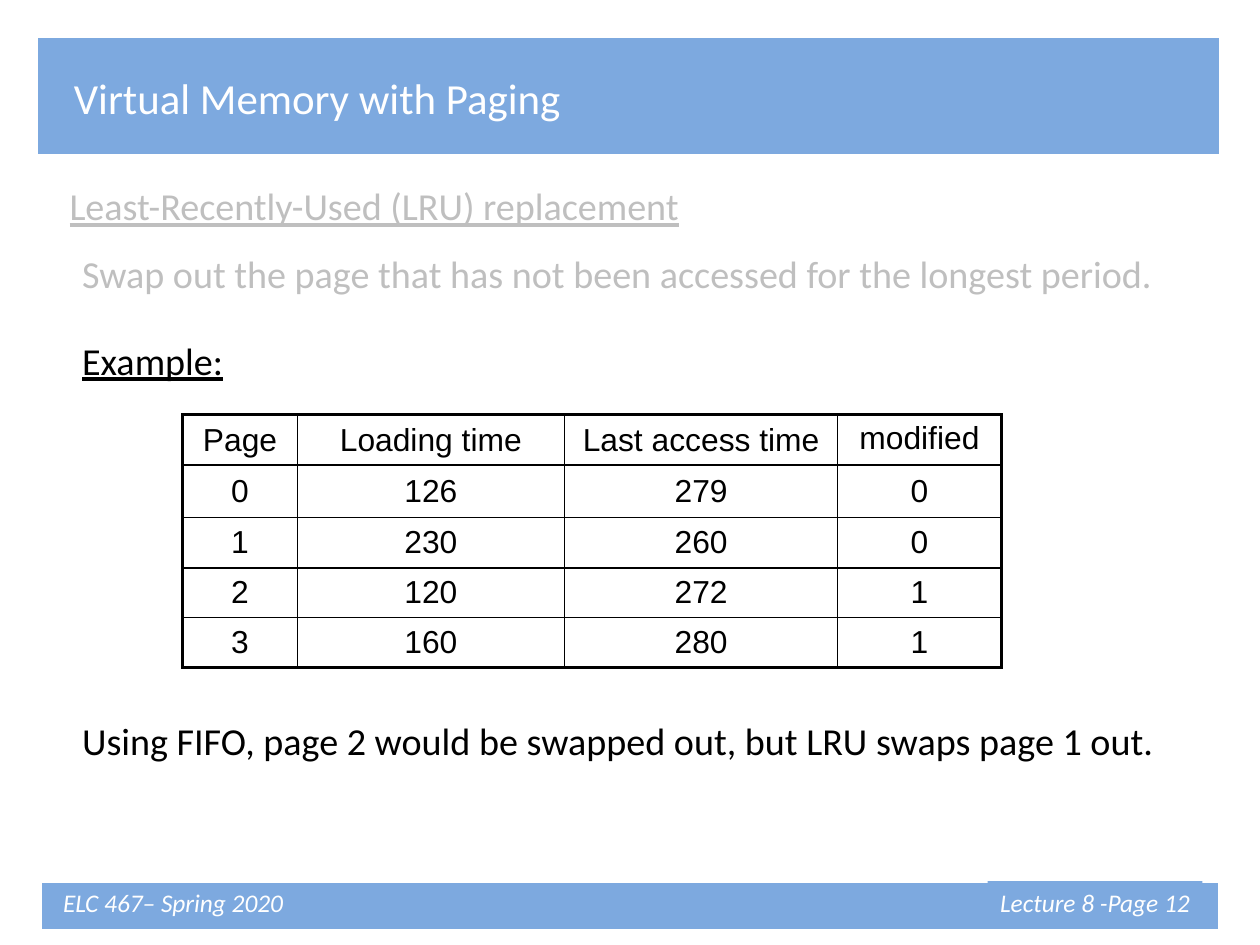
from dataclasses import dataclass

from lxml.etree import SubElement
from pptx import Presentation
from pptx.dml.color import RGBColor as RGB
from pptx.enum.shapes import MSO_SHAPE as SHAPE
from pptx.enum.text import MSO_ANCHOR as ANCHOR, MSO_AUTO_SIZE as AUTO, PP_ALIGN as ALIGN
from pptx.oxml.ns import qn
from pptx.slide import Slide
from pptx.util import Inches, Pt

COLORS = {"blue": "7DA9DF", "white": "FFFFFF", "gray": "BFBFBF", "black": "000000"}
THIN, THICK = 1, 2.25
CM_PER_INCH = 2.54
SLIDE_WIDTH, SLIDE_HEIGHT = 28 / CM_PER_INCH, 21 / CM_PER_INCH


@dataclass
class Bar:
    left: float
    top: float
    width: float
    height: float


@dataclass
class Label:
    text: str
    left: float
    top: float
    width: float
    height: float
    color: str
    size: float = 24
    align: ALIGN = ALIGN.CENTER
    wrap: bool = False
    underline: bool = False
    italic: bool = False
    fill: str = ""
    inset: bool = True


TITLE_BAR = Bar(0.32, 0.32, 10.36, 1.04)
FOOTER_BAR = Bar(0.35, 7.71, 10.32, 0.43)

LABELS = [
    Label("Virtual Memory with Paging", 0.49, 0.58, 4.57, 0.56, "white", size=27),
    Label("Lecture 8 -Page 12", 8.64, 7.71, 1.88, 0.37, "white", size=16,
          italic=True, fill="blue"),
    Label("ELC 467– Spring 2020", 0.54, 7.76, 1.95, 0.27, "white", size=16,
          italic=True, fill="blue", inset=False),
    Label("Least-Recently-Used (LRU) replacement", 0.47, 1.55, 5.61, 0.5, "gray",
          underline=True),
    Label("Swap out the page that has not been accessed for the longest period.",
          0.62, 2.14, 9.58, 0.5, "gray", align=ALIGN.JUSTIFY, wrap=True),
    Label("Example:", 0.62, 2.9, 1.83, 0.5, "black", align=ALIGN.LEFT, wrap=True,
          underline=True),
    Label("Using FIFO, page 2 would be swapped out, but LRU swaps page 1 out.",
          0.62, 6.23, 9.7, 0.5, "black", align=ALIGN.JUSTIFY, wrap=True),
]

PAGES = [
    ["Page", "Loading time", "Last access time", "modified"],
    ["0", "126", "279", "0"],
    ["1", "230", "260", "0"],
    ["2", "120", "272", "1"],
    ["3", "160", "280", "1"],
]
COL_WIDTHS = [1, 2.34, 2.39, 1.43]
ROW_HEIGHTS = [0.44, 0.46, 0.44, 0.43, 0.43]


def rgb(name: str) -> RGB:
    return RGB.from_string(COLORS[name])


def add_bar(s: Slide, bar: Bar) -> None:
    sp = s.shapes.add_shape(SHAPE.RECTANGLE, Inches(bar.left), Inches(bar.top),
                            Inches(bar.width), Inches(bar.height))
    sp.shadow.inherit = False
    sp.fill.solid()
    sp.fill.fore_color.rgb = rgb("blue")
    sp.line.color.rgb = rgb("white")
    sp.line.width = Pt(2)


def add_label(s: Slide, label: Label) -> None:
    sp = s.shapes.add_textbox(Inches(label.left), Inches(label.top),
                              Inches(label.width), Inches(label.height))
    if label.fill:
        sp.fill.solid()
        sp.fill.fore_color.rgb = rgb(label.fill)
    tf = sp.text_frame
    tf.word_wrap = label.wrap
    tf.auto_size = AUTO.SHAPE_TO_FIT_TEXT
    if not label.inset:
        tf.margin_left = tf.margin_right = tf.margin_top = tf.margin_bottom = 0
    p = tf.paragraphs[0]
    p.text = label.text
    p.alignment = label.align
    p.font.name = "Calibri"
    p.font.size = Pt(label.size)
    p.font.color.rgb = rgb(label.color)
    p.font.underline = label.underline
    p.font.italic = label.italic


def add_borders(cell, widths: dict[str, float]) -> None:
    tc_pr = cell._tc.get_or_add_tcPr()
    for side, width in widths.items():
        ln = SubElement(tc_pr, qn(f"a:ln{side}"), w=str(Pt(width)))
        fill = SubElement(ln, qn("a:solidFill"))
        SubElement(fill, qn("a:srgbClr"), val=COLORS["black"])


def add_page_table(s: Slide) -> None:
    rows, cols = len(ROW_HEIGHTS), len(COL_WIDTHS)
    table = s.shapes.add_table(rows, cols, Inches(1.6), Inches(3.63),
                               Inches(sum(COL_WIDTHS)), Inches(sum(ROW_HEIGHTS))).table
    table.first_row = table.horz_banding = False
    for col, width in zip(table.columns, COL_WIDTHS):
        col.width = Inches(width)
    for row, height in zip(table.rows, ROW_HEIGHTS):
        row.height = Inches(height)
    for i, values in enumerate(PAGES):
        for j, value in enumerate(values):
            cell = table.cell(i, j)
            outer = {"L": j == 0, "R": j == cols - 1, "T": i == 0, "B": i == rows - 1}
            add_borders(cell, {side: THICK if edge else THIN
                               for side, edge in outer.items()})
            cell.fill.background()
            is_top = value == "modified"
            cell.vertical_anchor = ANCHOR.TOP if is_top else ANCHOR.MIDDLE
            p = cell.text_frame.paragraphs[0]
            p.text = value
            p.alignment = ALIGN.CENTER
            p.space_after = Pt(14.1)
            p.font.name = "Arial"
            p.font.size = Pt(20)
            p.font.color.rgb = rgb("black")


def main() -> None:
    prs = Presentation()
    prs.slide_width, prs.slide_height = Inches(SLIDE_WIDTH), Inches(SLIDE_HEIGHT)
    s = prs.slides.add_slide(prs.slide_layouts[6])
    for bar in (TITLE_BAR, FOOTER_BAR):
        add_bar(s, bar)
    for label in LABELS:
        add_label(s, label)
    add_page_table(s)
    prs.save("out.pptx")


if __name__ == "__main__":
    main()
